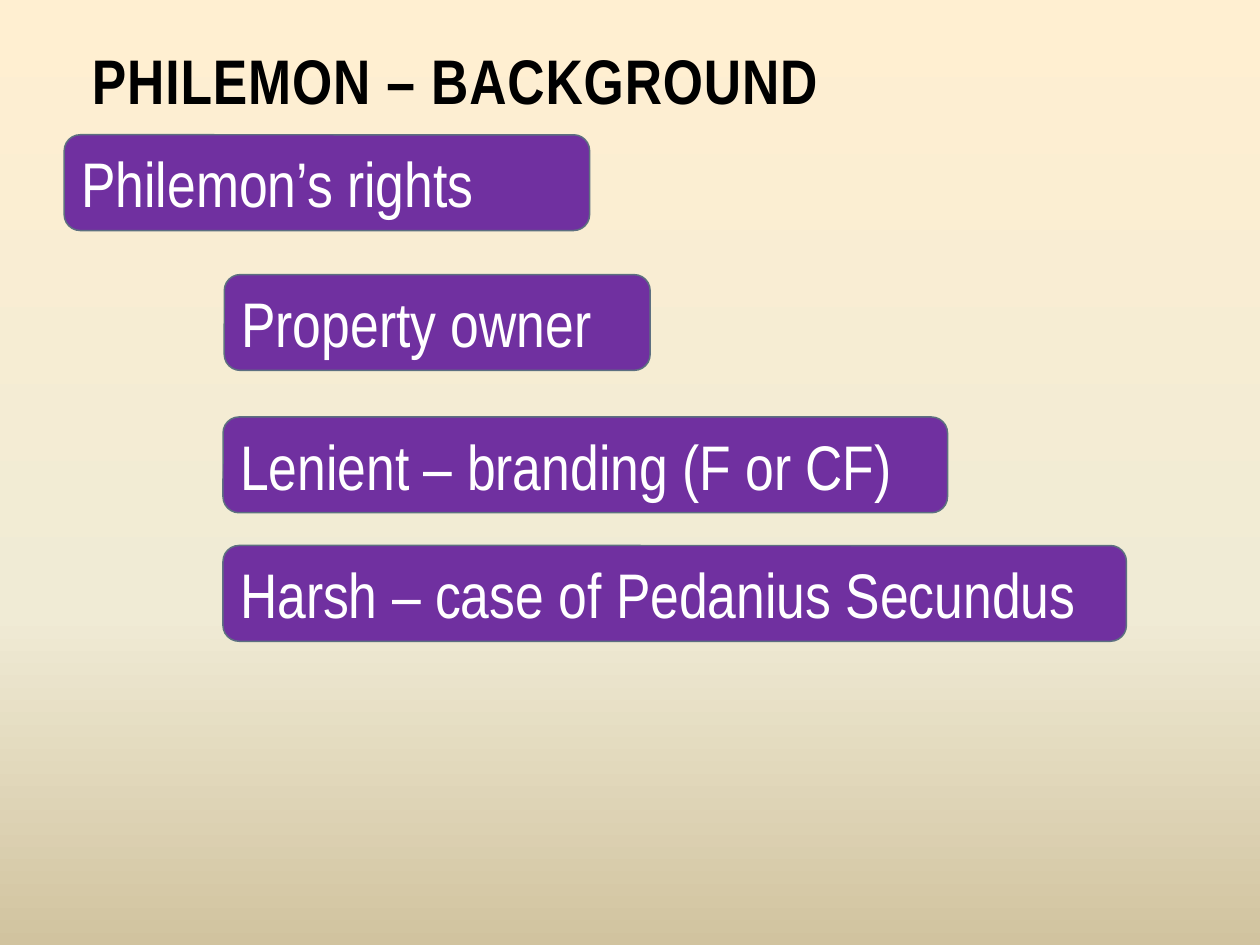
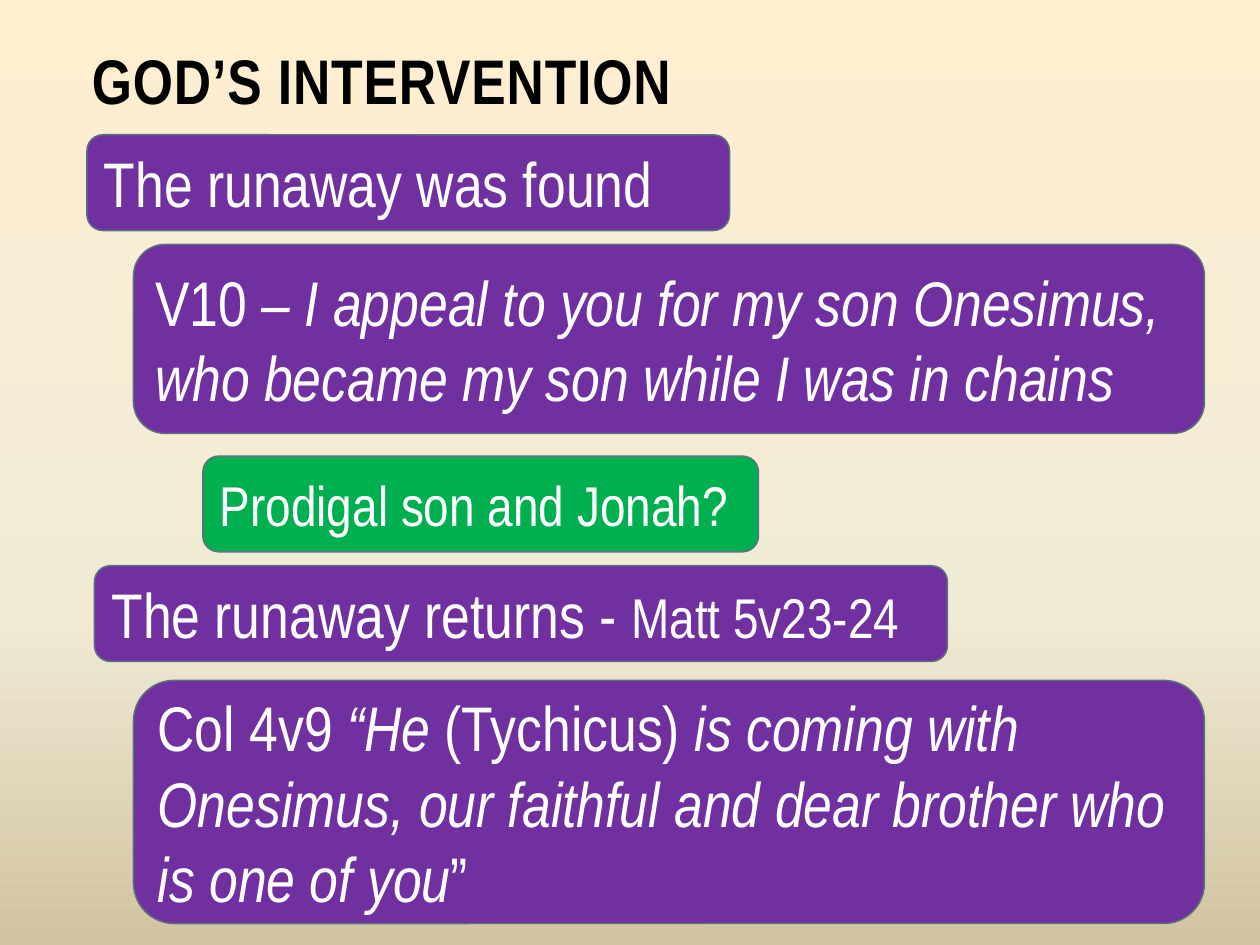
from copy import deepcopy
from pptx import Presentation
from pptx import util as u
from pptx.dml.color import RGBColor
from pptx.enum import shapes, text

PURPLE = RGBColor(0x70, 0x30, 0xA0)
GREEN = RGBColor(0x00, 0xB0, 0x50)
SLATE = RGBColor(0x5D, 0x70, 0x80)
WHITE = RGBColor(0xFF, 0xFF, 0xFF)
BLACK = RGBColor(0x00, 0x00, 0x00)
CREAM = RGBColor(0xFF, 0xEF, 0xD1)
IVORY = RGBColor(0xF0, 0xEB, 0xD5)
SAND = RGBColor(0xD1, 0xC3, 0x9F)
FACE = "Arial Narrow"
BIG, SMALL = 36, 32
ROW = 7.6

deck = Presentation()
deck.slide_width, deck.slide_height = u.Inches(10), u.Inches(7.5)
CELL = deck.slide_width / 100


def place(shape, *cells):
    shape.left, shape.top, shape.width, shape.height = [round(n * CELL) for n in cells]


def style(para, size, color):
    para.alignment = text.PP_ALIGN.LEFT
    para.font.name = FACE
    para.font.size = u.Pt(size)
    para.font.color.rgb = color


master = deck.slide_master
fill = master.background.fill
fill.gradient()
fill.gradient_angle = 270
first = master.element.xpath("./p:cSld/p:bg//a:gs")[0]
first.addnext(deepcopy(first))
for stop, color, share in zip(fill.gradient_stops, (CREAM, IVORY, SAND), (0, 0.65, 1)):
    stop.color.rgb = color
    stop.position = share

# Each box: left, top, width, height, fill, size, runs of (words, italic, size)
pages = [
    ("PHILEMON – BACKGROUND", [
        (5.1, 10.7, 41.7, ROW, PURPLE, BIG, [("Philemon’s rights", False, None)]),
        (17.8, 21.8, 33.8, ROW, PURPLE, BIG, [("Property owner", False, None)]),
        (17.7, 33.1, 57.5, ROW, PURPLE, BIG, [("Lenient – branding (F or CF)", False, None)]),
        (17.7, 43.3, 71.7, ROW, PURPLE, BIG, [("Harsh – case of Pedanius Secundus", False, None)]),
    ]),
    ("GOD’S INTERVENTION", [
        (10.6, 19.4, 85, 15, PURPLE, BIG, [
            ("V10 ", False, None),
            ("– I appeal to you for my son Onesimus, who became my son while I was in chains", True, None)]),
        (6.9, 10.7, 51, ROW, PURPLE, BIG, [("The runaway was found", False, None)]),
        (16.1, 36.2, 44.1, ROW, GREEN, SMALL, [("Prodigal son and Jonah?", False, None)]),
        (7.5, 44.9, 67.7, ROW, PURPLE, BIG, [
            ("The runaway returns - ", False, None), ("Matt 5v23-24", False, SMALL)]),
        (10.6, 54, 85, 19.3, PURPLE, BIG, [
            ("Col 4v9 ", False, None), ("“He", True, None), (" (Tychicus) ", False, None),
            ("is coming with Onesimus, our faithful and dear brother who is one of you", True, None),
            ("”", False, None)]),
    ]),
]

for head, boxes in pages:
    slide = deck.slides.add_slide(deck.slide_layouts[5])
    title = slide.shapes.title
    place(title, 6.3, 2.1, 86.7, 7.7)
    frame = title.text_frame
    frame.text = head
    frame.auto_size = text.MSO_AUTO_SIZE.NONE
    frame.vertical_anchor = text.MSO_ANCHOR.BOTTOM
    para = frame.paragraphs[0]
    style(para, BIG, BLACK)
    para.font.bold = True
    para.runs[0].font.size = u.Pt(BIG)
    para.runs[0].font._element.set("spc", "50")

    for left, top, width, height, tint, size, runs in boxes:
        box = slide.shapes.add_shape(shapes.MSO_SHAPE.ROUNDED_RECTANGLE, 0, 0, 0, 0)
        place(box, left, top, width, height)
        box.shadow.inherit = False
        box.fill.solid()
        box.fill.fore_color.rgb = tint
        box.line.color.rgb = SLATE
        box.line.width = u.Pt(0.85)
        frame = box.text_frame
        frame.word_wrap = True
        frame.vertical_anchor = text.MSO_ANCHOR.MIDDLE
        para = frame.paragraphs[0]
        style(para, size, WHITE)
        for words, slant, points in runs:
            run = para.add_run()
            run.text = words
            if slant:
                run.font.italic = True
            if points:
                run.font.size = u.Pt(points)

deck.save("out.pptx")
